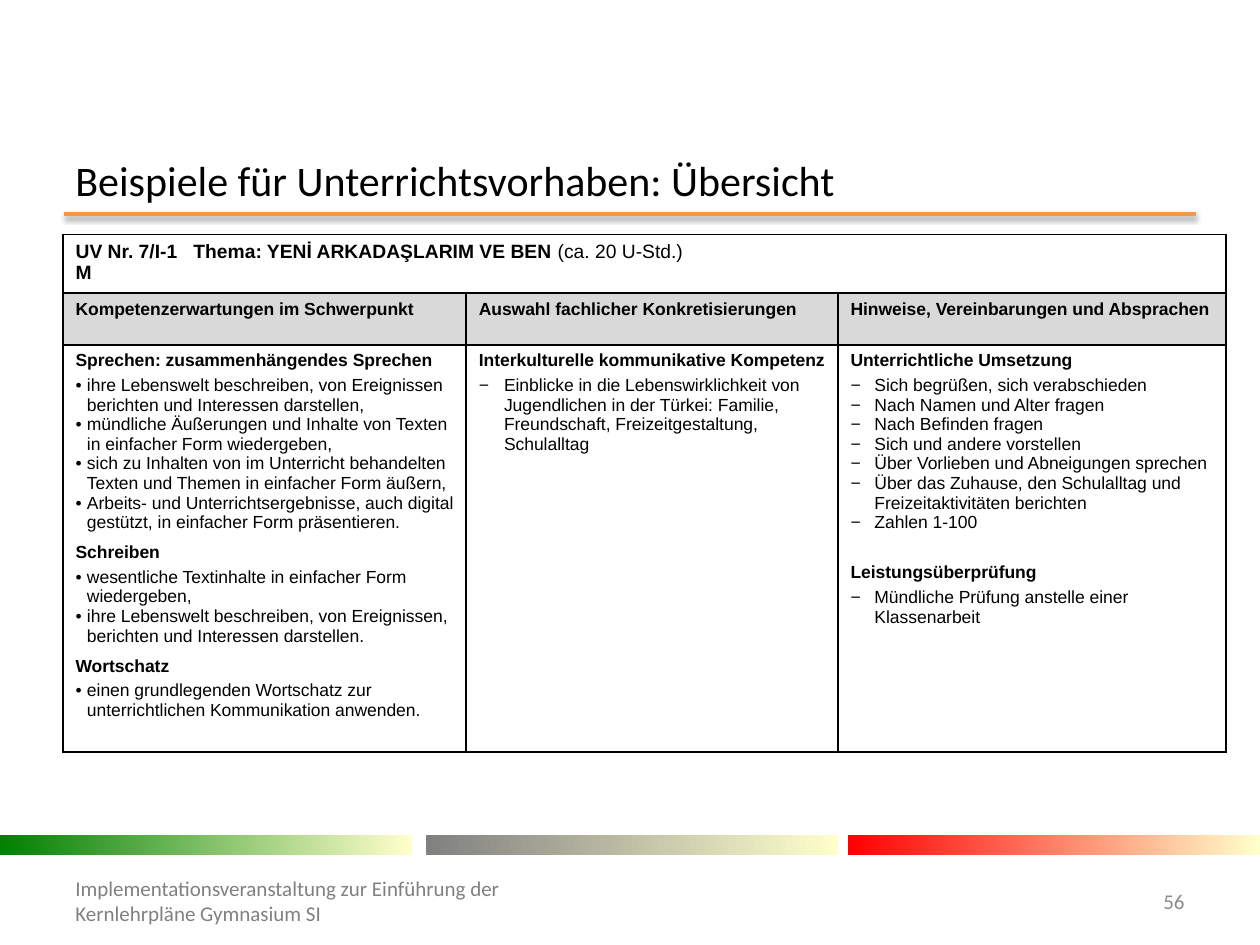
"""Build the slide with the overview table of a Turkish teaching unit."""
from lxml.etree import SubElement
from pptx import Presentation
from pptx.dml.color import RGBColor
from pptx.enum.shapes import MSO_CONNECTOR, MSO_SHAPE
from pptx.enum.text import MSO_ANCHOR, PP_ALIGN
from pptx.oxml import parse_xml
from pptx.oxml.ns import nsdecls, qn
from pptx.util import Inches, Pt

BLACK = RGBColor(0, 0, 0)
WHITE = RGBColor(255, 255, 255)
HEADER_GREY = RGBColor(0xD9, 0xD9, 0xD9)
FOOTER_GREY = RGBColor(0x80, 0x80, 0x80)
NUMBER_GREY = RGBColor(0x8C, 0x8C, 0x8C)
ORANGE = RGBColor(0xF7, 0x96, 0x46)
GREEN = RGBColor(0, 0x80, 0)
RED = RGBColor(255, 0, 0)
CREAM = RGBColor(0xFF, 0xFF, 0xCC)

BARS = ((0, GREEN), (3.38, FOOTER_GREY), (6.73, RED))
COLUMN_WIDTHS = (3.2, 2.95, 3.08)
ROW_HEIGHTS = (0.44, 0.41, 3.02)
HEADERS = (
    "Kompetenzerwartungen im Schwerpunkt",
    "Auswahl fachlicher Konkretisierungen",
    "Hinweise, Vereinbarungen und Absprachen",
)
COMPETENCES = (
    ("Sprechen: zusammenhängendes Sprechen", 0, (
        "ihre Lebenswelt beschreiben, von Ereignissen berichten und Interessen darstellen,",
        "mündliche Äußerungen und Inhalte von Texten in einfacher Form wiedergeben,",
        "sich zu Inhalten von im Unterricht behandelten Texten und Themen "
        "in einfacher Form äußern,",
        "Arbeits- und Unterrichtsergebnisse, auch digital gestützt, "
        "in einfacher Form präsentieren.",
    )),
    ("Schreiben", 6, (
        "wesentliche Textinhalte in einfacher Form wiedergeben,",
        "ihre Lebenswelt beschreiben, von Ereignissen, berichten und Interessen darstellen.",
    )),
    ("Wortschatz", 6, (
        "einen grundlegenden Wortschatz zur unterrichtlichen Kommunikation anwenden.",
    )),
)
CONCRETISATIONS = (
    ("Interkulturelle kommunikative Kompetenz", 0, (
        "Einblicke in die Lebenswirklichkeit von Jugendlichen in der Türkei: "
        "Familie, Freundschaft, Freizeitgestaltung, Schulalltag",
    )),
)
AGREEMENTS = (
    ("Unterrichtliche Umsetzung", 0, (
        "Sich begrüßen, sich verabschieden",
        "Nach Namen und Alter fragen",
        "Nach Befinden fragen",
        "Sich und andere vorstellen",
        "Über Vorlieben und Abneigungen sprechen",
        "Über das Zuhause, den Schulalltag und Freizeitaktivitäten berichten",
        "Zahlen 1-100",
    )),
    ("Leistungsüberprüfung", 17.5, ("Mündliche Prüfung anstelle einer Klassenarbeit",)),
)
BODY_COLUMNS = (
    (COMPETENCES, "•", 0.09),
    (CONCRETISATIONS, "−", 0.2),
    (AGREEMENTS, "−", 0.19),
)


def style_font(font, name, size, color, bold=False):
    font.name = name
    font.size = Pt(size)
    font.bold = bold
    font.color.rgb = color


def add_label(slide, text, box, size, color, align=PP_ALIGN.LEFT):
    frame = slide.shapes.add_textbox(*map(Inches, box)).text_frame
    frame.word_wrap = True
    frame.vertical_anchor = MSO_ANCHOR.MIDDLE
    frame.text = text
    line = frame.paragraphs[0]
    line.alignment = align
    style_font(line.runs[0].font, "Calibri", size, color)


def add_title_rule(slide):
    rule = slide.shapes.add_connector(
        MSO_CONNECTOR.STRAIGHT, Inches(0.51), Inches(1.7), Inches(9.49), Inches(1.7))
    rule.line.color.rgb = ORANGE
    rule.line.width = Pt(2)
    rule._element.spPr.append(parse_xml(
        f'<a:effectLst {nsdecls("a")}>'
        f'<a:outerShdw blurRad="{Pt(3.1)}" dist="{Pt(1.6)}" dir="5400000" rotWithShape="0">'
        '<a:srgbClr val="000000"><a:alpha val="38000"/></a:srgbClr>'
        '</a:outerShdw></a:effectLst>'))


def add_gradient_bar(slide, left, color):
    bar = slide.shapes.add_shape(
        MSO_SHAPE.RECTANGLE, Inches(left), Inches(6.63), Inches(3.27), Inches(0.16))
    bar.shadow.inherit = False
    bar.line.fill.background()
    bar.fill.gradient()
    bar.fill.gradient_angle = 0
    for stop, position, shade in zip(bar.fill.gradient_stops, (0, 1), (color, CREAM)):
        stop.position = position
        stop.color.rgb = shade


def format_cell(cell, color):
    properties = cell._tc.get_or_add_tcPr()
    for side in ("lnL", "lnR", "lnT", "lnB"):
        properties.append(parse_xml(
            f'<a:{side} {nsdecls("a")} w="{Pt(1)}"><a:solidFill>'
            f'<a:srgbClr val="{BLACK}"/></a:solidFill></a:{side}>'))
    cell.fill.solid()
    cell.fill.fore_color.rgb = color


def add_paragraph(frame, text):
    paragraph = frame.add_paragraph() if frame.text else frame.paragraphs[0]
    paragraph.text = text
    return paragraph


def add_bullet(paragraph, mark, indent):
    properties = paragraph._p.get_or_add_pPr()
    properties.set("marL", str(Inches(indent)))
    properties.set("indent", str(-Inches(indent)))
    SubElement(properties, qn("a:buFont"), typeface="Arial")
    SubElement(properties, qn("a:buChar"), char=mark)


def fill_body_cell(frame, sections, mark, indent):
    for heading, space_before, items in sections:
        head = add_paragraph(frame, heading)
        head.space_before = Pt(space_before)
        head.space_after = Pt(3)
        style_font(head.runs[0].font, "Arial", 10, BLACK, True)
        for item in items:
            entry = add_paragraph(frame, item)
            add_bullet(entry, mark, indent)
            style_font(entry.runs[0].font, "Arial", 10, BLACK)


def fill_topic_cell(frame):
    topic = add_paragraph(frame, "UV Nr. 7/I-1   Thema: YENİ ARKADAŞLARIM VE BEN ")
    topic.add_run().text = "(ca. 20 U-Std.)"
    marker = add_paragraph(frame, "M")
    for run, bold in zip((*topic.runs, *marker.runs), (True, False, True)):
        style_font(run.font, "Arial", 11, BLACK, bold)


def add_unit_table(slide):
    table = slide.shapes.add_table(
        len(ROW_HEIGHTS), len(COLUMN_WIDTHS), Inches(0.5), Inches(1.86),
        Inches(sum(COLUMN_WIDTHS)), Inches(sum(ROW_HEIGHTS))).table
    table.first_row = table.horz_banding = False
    for column, width in zip(table.columns, COLUMN_WIDTHS):
        column.width = Inches(width)
    for row, height, color in zip(table.rows, ROW_HEIGHTS, (WHITE, HEADER_GREY, WHITE)):
        row.height = Inches(height)
        for cell in row.cells:
            format_cell(cell, color)
    table.cell(0, 0).merge(table.cell(0, len(COLUMN_WIDTHS) - 1))
    fill_topic_cell(table.cell(0, 0).text_frame)
    for index, (header, body) in enumerate(zip(HEADERS, BODY_COLUMNS)):
        head = add_paragraph(table.cell(1, index).text_frame, header)
        style_font(head.runs[0].font, "Arial", 10, BLACK, True)
        fill_body_cell(table.cell(2, index).text_frame, *body)


def main():
    deck = Presentation()
    deck.slide_width, deck.slide_height = Inches(10), Inches(7.5)
    slide = deck.slides.add_slide(deck.slide_layouts[6])
    add_title_rule(slide)
    for left, color in BARS:
        add_gradient_bar(slide, left, color)
    add_label(slide, "Beispiele für Unterrichtsvorhaben: Übersicht",
              (0.5, 1.23, 9, 0.39), 24, BLACK)
    add_label(slide, "Implementationsveranstaltung zur Einführung der Kernlehrpläne Gymnasium SI",
              (0.5, 6.95, 4.03, 0.39), 12, FOOTER_GREY)
    add_label(slide, "56", (8.86, 6.95, 0.64, 0.4), 12, NUMBER_GREY, PP_ALIGN.RIGHT)
    add_unit_table(slide)
    deck.save("out.pptx")


if __name__ == "__main__":
    main()
